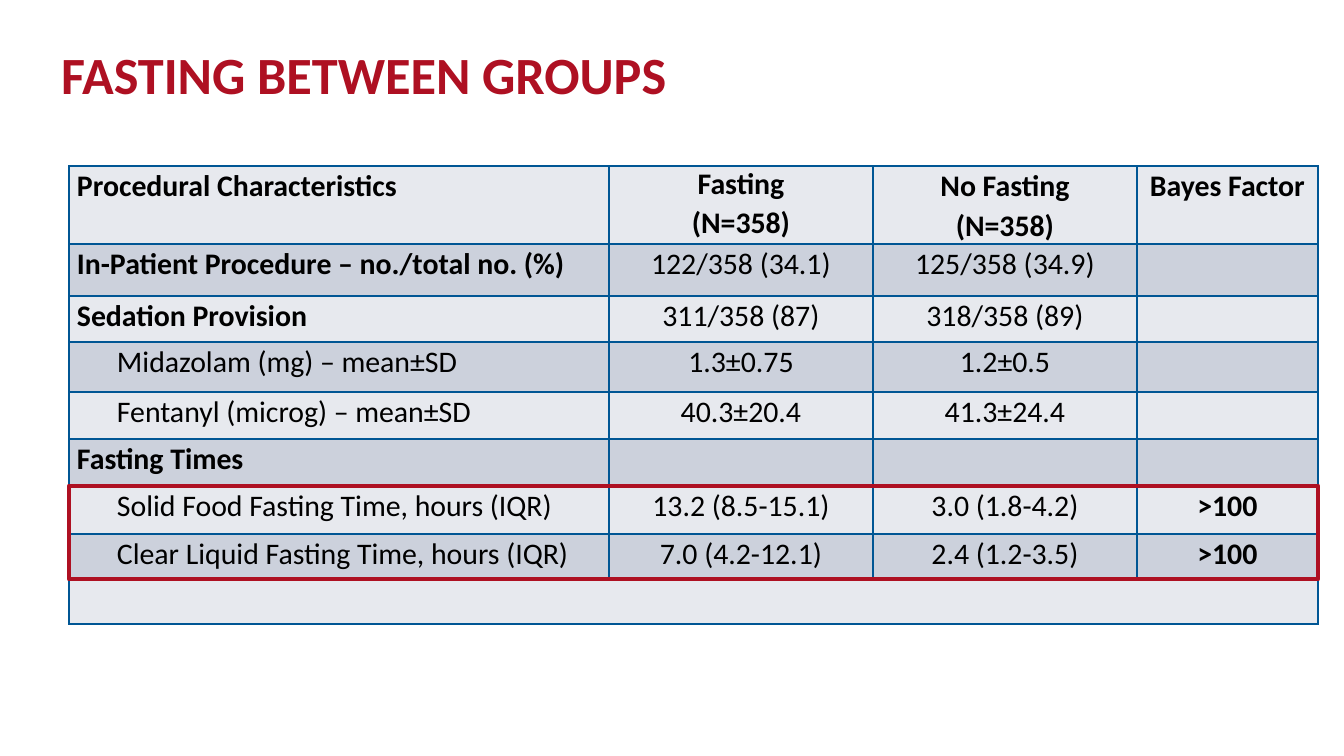
from itertools import product

from lxml import etree
from pptx import Presentation, util as u
from pptx.dml.color import RGBColor
from pptx.enum import shapes, text
from pptx.oxml.ns import qn

# Content: one tuple per table row; INDENTED and BOLD_LABELS hold row numbers
TITLE = "FASTING BETWEEN GROUPS"
ROWS = [
    ("Procedural Characteristics", "Fasting\n(N=358)", "No Fasting\n(N=358)", "Bayes Factor"),
    ("In-Patient Procedure – no./total no. (%)", "122/358 (34.1)", "125/358 (34.9)", ""),
    ("Sedation Provision", "311/358 (87)", "318/358 (89)", ""),
    ("Midazolam (mg) – mean±SD", "1.3±0.75", "1.2±0.5", ""),
    ("Fentanyl (microg) – mean±SD", "40.3±20.4", "41.3±24.4", ""),
    ("Fasting Times", "", "", ""),
    ("Solid Food Fasting Time, hours (IQR)", "13.2 (8.5-15.1)", "3.0 (1.8-4.2)", ">100"),
    ("Clear Liquid Fasting Time, hours (IQR)", "7.0 (4.2-12.1)", "2.4 (1.2-3.5)", ">100"),
    ("", "", "", ""),
]
INDENTED = {3, 4, 6, 7}
HIGHLIGHTED = (6, 7)

THEME = {
    "font": "Calibri", "title_size": 28, "cell_size": 16,
    "red": "AE1022", "black": "000000", "border": "005694",
    "bands": ("E7E9EE", "CCD1DC"),
}

# Layout in px
SLIDE = (1344, 756)
TITLE_BOX = (48, 50, 1122, 63)
TABLE_LEFT, TABLE_TOP = 69, 166
COLUMN_WIDTHS = (540, 264, 264, 181)
ROW_HEIGHTS = (78, 52, 46, 50, 47, 47, 48, 45, 45)
CELL_INSET, LABEL_INDENT = 8, 40
EMU_PER_PX = u.Inches(10) / SLIDE[0]


def px(length):
    return u.Emu(round(length * EMU_PER_PX))


def write(frame, words, *, size, color, bold=False, align=text.PP_ALIGN.LEFT,
          spacing=1.0, first_spacing=None, after=0, indent=0):
    for number, line in enumerate(words.split("\n")):
        paragraph = frame.paragraphs[0] if number == 0 else frame.add_paragraph()
        paragraph.alignment = align
        paragraph.line_spacing = first_spacing if first_spacing and number == 0 else spacing
        paragraph.space_after = u.Pt(after)
        if indent:
            paragraph._p.get_or_add_pPr().set("marL", str(px(indent)))
        run = paragraph.add_run()
        run.text = line
        run.font.name = THEME["font"]
        run.font.size = u.Pt(size)
        run.font.bold = bold
        run.font.color.rgb = RGBColor.from_string(color)


def style_cell(cell, fill):
    cell.margin_left = cell.margin_right = px(CELL_INSET)
    cell.margin_top = cell.margin_bottom = 0
    properties = cell._tc.get_or_add_tcPr()
    for side in ("a:lnL", "a:lnR", "a:lnT", "a:lnB"):
        line = etree.SubElement(properties, qn(side), w=str(u.Pt(1)))
        solid = etree.SubElement(line, qn("a:solidFill"))
        etree.SubElement(solid, qn("a:srgbClr"), val=THEME["border"])
    cell.fill.solid()
    cell.fill.fore_color.rgb = RGBColor.from_string(fill)


deck = Presentation()
deck.slide_width, deck.slide_height = map(px, SLIDE)
slide = deck.slides.add_slide(deck.slide_layouts[6])

# Title
heading = slide.shapes.add_textbox(*map(px, TITLE_BOX)).text_frame
heading.word_wrap = True
heading.vertical_anchor = text.MSO_ANCHOR.MIDDLE
write(heading, TITLE, size=THEME["title_size"], color=THEME["red"], bold=True,
      spacing=u.Pt(25))

# Table
table_width = sum(COLUMN_WIDTHS)
table = slide.shapes.add_table(
    len(ROWS), len(COLUMN_WIDTHS), px(TABLE_LEFT), px(TABLE_TOP),
    px(table_width), px(sum(ROW_HEIGHTS))).table
table.first_row = table.horz_banding = False
for column, width in zip(table.columns, COLUMN_WIDTHS):
    column.width = px(width)
for row, height in zip(table.rows, ROW_HEIGHTS):
    row.height = px(height)

for r, c in product(range(len(ROWS)), range(len(COLUMN_WIDTHS))):
    cell, words = table.cell(r, c), ROWS[r][c]
    style_cell(cell, THEME["bands"][r % 2])
    if not words:
        continue
    is_label = c == 0
    indented = is_label and r in INDENTED
    write(cell.text_frame, words, size=THEME["cell_size"], color=THEME["black"],
          bold=r == 0 or c == 3 or (is_label and not indented),
          align=text.PP_ALIGN.JUSTIFY if is_label else text.PP_ALIGN.CENTER,
          spacing=1.07, first_spacing=1.0 if (r, c) == (0, 1) else None,
          after=0 if "\n" in words else 8,
          indent=LABEL_INDENT if indented else 0)
table.cell(len(ROWS) - 1, 0).merge(table.cell(len(ROWS) - 1, len(COLUMN_WIDTHS) - 1))

# Frame around the fasting-time rows
first, last = HIGHLIGHTED
frame_top = TABLE_TOP + sum(ROW_HEIGHTS[:first])
highlight = slide.shapes.add_shape(
    shapes.MSO_SHAPE.RECTANGLE, px(TABLE_LEFT), px(frame_top),
    px(table_width), px(sum(ROW_HEIGHTS[first:last + 1])))
highlight.shadow.inherit = False
highlight.fill.background()
highlight.line.color.rgb = RGBColor.from_string(THEME["red"])
highlight.line.width = u.Pt(2.5)

deck.save("out.pptx")
